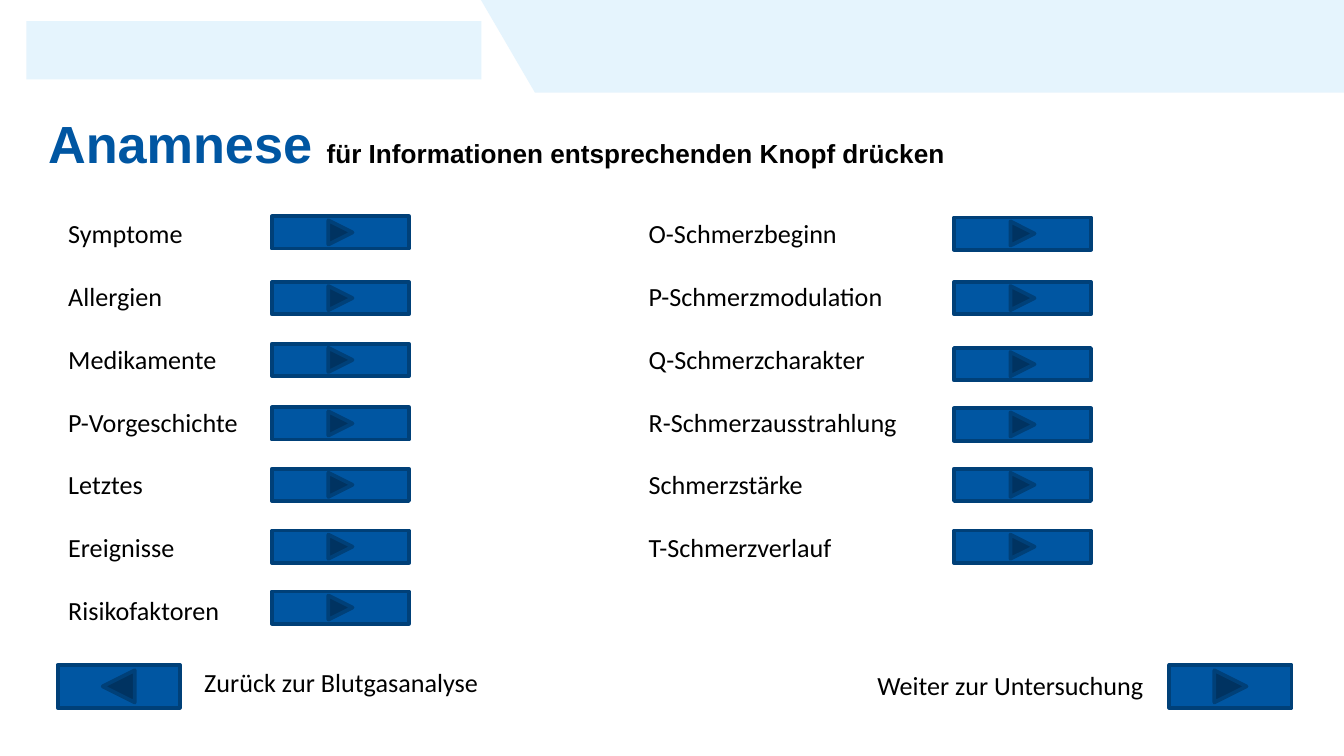
from dataclasses import dataclass

from pptx import Presentation
from pptx.dml.color import RGBColor
from pptx.enum.shapes import MSO_SHAPE
from pptx.enum.text import MSO_ANCHOR
from pptx.util import Cm, Pt

NEXT = MSO_SHAPE.ACTION_BUTTON_FORWARD_OR_NEXT
BACK = MSO_SHAPE.ACTION_BUTTON_BACK_OR_PREVIOUS
RECTANGLE = MSO_SHAPE.RECTANGLE
MIDDLE = MSO_ANCHOR.MIDDLE

BLUE, DARK_BLUE, PALE_BLUE, BLACK = "0056A2", "004078", "E5F4FD", "000000"
BODY_FONT, TITLE_FONT = "Calibri", "Arial"


@dataclass
class Box:
    """Position and size in centimetres."""
    left: float
    top: float
    width: float
    height: float

    def emu(self) -> tuple:
        return Cm(self.left), Cm(self.top), Cm(self.width), Cm(self.height)


@dataclass
class Topic:
    label: str
    button_top: float


@dataclass
class TopicColumn:
    text_box: Box
    button_left: float
    topics: list[Topic]


@dataclass
class Navigation:
    label: str
    text_box: Box
    kind: int
    button_left: float


COLUMNS = [
    TopicColumn(Box(1.04, 3.99, 10.08, 8.03), 5.14, [
        Topic("Symptome", 4.09),
        Topic("Allergien", 5.33),
        Topic("Medikamente", 6.5),
        Topic("P-Vorgeschichte", 7.7),
        Topic("Letztes", 8.86),
        Topic("Ereignisse", 10.03),
        Topic("Risikofaktoren", 11.18),
    ]),
    TopicColumn(Box(12.01, 3.99, 10.08, 6.83), 18.03, [
        Topic("O-Schmerzbeginn", 4.11),
        Topic("P-Schmerzmodulation", 5.33),
        Topic("Q-Schmerzcharakter", 6.58),
        Topic("R-Schmerzausstrahlung", 7.72),
        Topic("Schmerzstärke", 8.86),
        Topic("T-Schmerzverlauf", 10.03),
    ]),
]

NAVIGATION = [
    Navigation("Zurück zur Blutgasanalyse", Box(3.61, 12.47, 7.29, 0.86), BACK, 1.09),
    Navigation("Weiter zur Untersuchung", Box(16.33, 12.52, 5.99, 0.86), NEXT, 22.1),
]


def rgb(value: str) -> RGBColor:
    return RGBColor.from_string(value)


def add_run(p, text: str, size: float = 14, font: str = BODY_FONT,
            color: str = BLACK, bold: bool = False) -> None:
    r = p.add_run()
    r.text = text
    r.font.size, r.font.name, r.font.bold = Pt(size), font, bold
    r.font.color.rgb = rgb(color)


def add_text_frame(s, box: Box):
    tf = s.shapes.add_textbox(*box.emu()).text_frame
    tf.word_wrap = True
    return tf


def add_lines(s, box: Box, lines: list[str]) -> None:
    tf = add_text_frame(s, box)
    for i, line in enumerate(lines):
        p = tf.add_paragraph() if i else tf.paragraphs[0]
        p.space_before = Pt(16.8 if i else 0)
        add_run(p, line)


def paint(sp, fill: str) -> None:
    sp.shadow.inherit = False
    sp.fill.solid()
    sp.fill.fore_color.rgb = rgb(fill)
    sp.line.fill.background()


def add_button(s, kind: int, box: Box) -> None:
    sp = s.shapes.add_shape(kind, *box.emu())
    paint(sp, BLUE)
    sp.line.color.rgb = rgb(DARK_BLUE)
    sp.line.width = Pt(2)


def add_header(s) -> None:
    # Plain block in the sender's corner
    paint(s.shapes.add_shape(RECTANGLE, *Box(0.5, 0.4, 8.6, 1.1).emu()), PALE_BLUE)

    # Slanted banner
    fb = s.shapes.build_freeform(Cm(9.09), Cm(0))
    fb.add_line_segments([(Cm(10.11), Cm(1.75)), (Cm(25.4), Cm(1.75)),
                          (Cm(25.4), Cm(0))], close=True)
    paint(fb.convert_to_shape(), PALE_BLUE)

    # Title
    tf = add_text_frame(s, Box(0.66, 1.7, 24.05, 2.01))
    tf.vertical_anchor = MIDDLE
    p = tf.paragraphs[0]
    add_run(p, "Anamnese ", 28, TITLE_FONT, BLUE, True)
    add_run(p, "für Informationen entsprechenden Knopf drücken", 14, TITLE_FONT, BLACK, True)


def main() -> None:
    prs = Presentation()
    prs.slide_width, prs.slide_height = Cm(25.4), Cm(14.29)
    s = prs.slides.add_slide(prs.slide_layouts[6])
    add_header(s)

    # Topics with their buttons
    for column in COLUMNS:
        add_lines(s, column.text_box, [topic.label for topic in column.topics])
        for topic in column.topics:
            add_button(s, NEXT, Box(column.button_left, topic.button_top, 2.59, 0.61))

    # Navigation at the foot
    for nav in NAVIGATION:
        add_lines(s, nav.text_box, [nav.label])
        add_button(s, nav.kind, Box(nav.button_left, 12.57, 2.31, 0.81))

    prs.save("out.pptx")


if __name__ == "__main__":
    main()
